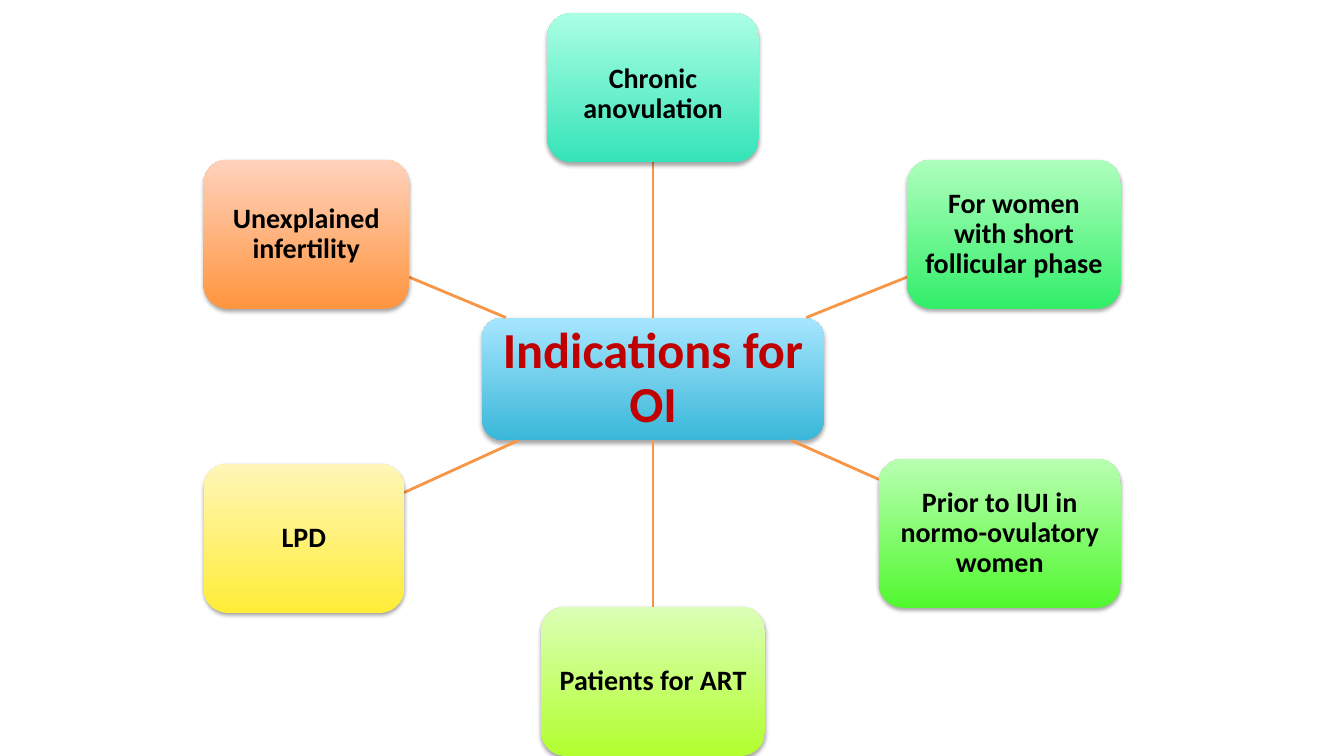
from lxml.etree import SubElement
from pptx import Presentation
from pptx.dml.color import RGBColor
from pptx.enum.shapes import MSO_CONNECTOR, MSO_SHAPE
from pptx.enum.text import MSO_ANCHOR, PP_ALIGN
from pptx.oxml.ns import qn
from pptx.util import Pt

BLACK = RGBColor(0x00, 0x00, 0x00)
RED = RGBColor(0xC0, 0x00, 0x00)
ORANGE = RGBColor(0xF7, 0x96, 0x46)
BLUES = RGBColor(0x39, 0xB7, 0xD8), RGBColor(0xA7, 0xE6, 0xFF)
TEALS = RGBColor(0x35, 0xE4, 0xB8), RGBColor(0xAB, 0xFF, 0xE3)
MINTS = RGBColor(0x32, 0xEE, 0x69), RGBColor(0xAF, 0xFF, 0xBD)
GREENS = RGBColor(0x51, 0xF8, 0x2F), RGBColor(0xB9, 0xFF, 0xB2)
LIMES = RGBColor(0xB2, 0xFF, 0x2F), RGBColor(0xDB, 0xFF, 0xB6)
YELLOWS = RGBColor(0xFF, 0xED, 0x37), RGBColor(0xFF, 0xF6, 0xB9)
PEACHES = RGBColor(0xFF, 0x95, 0x3E), RGBColor(0xFF, 0xD2, 0xBD)

HUB = 344.5, 226.8, 244, 87.8
HIGH = 106.6
NODES = [
    ("Chronic anovulation", 390.9, 9.4, 151.2, TEALS, 9),
    ("For women with short follicular phase", 648, 114, 152.6, MINTS, 0),
    ("Prior to IUI in normo-ovulatory women", 627.8, 327.6, 172.8, GREENS, 0),
    ("Patients for ART", 386.6, 433.4, 159.8, LIMES, 0),
    ("LPD", 145.4, 331.2, 143.3, YELLOWS, 0),
    ("Unexplained infertility", 145.4, 114, 146.9, PEACHES, 0),
]


def center(box):
    """Return the middle point of a box."""
    left, top, wide, high = box
    return left + wide / 2, top + high / 2


def edge(box, goal):
    """Return where the ray from the middle of a box to a goal leaves it."""
    x, y = center(box)
    dx, dy = goal[0] - x, goal[1] - y
    ratio = max(abs(dx) / (box[2] / 2), abs(dy) / (box[3] / 2))
    return x + dx / ratio, y + dy / ratio


class Board:
    """Draws the elements of a radial diagram on one slide."""

    font = "Calibri"

    def __init__(self, slide):
        """Keep the slide to draw on."""
        self.shapes = slide.shapes

    def card(self, text, box, fade, size, color, inset, drop=0):
        """Add a rounded card with a gradient, a soft shadow and text."""
        card = self.shapes.add_shape(
            MSO_SHAPE.ROUNDED_RECTANGLE, *(Pt(n) for n in box))
        card.fill.gradient()
        card.fill.gradient_angle = 90
        for stop, tone in zip(card.fill.gradient_stops, fade):
            stop.color.rgb = tone
        card.line.fill.background()
        self.shade(card)
        frame = card.text_frame
        frame.word_wrap = True
        frame.vertical_anchor = MSO_ANCHOR.MIDDLE
        frame.margin_left = frame.margin_right = Pt(inset)
        frame.margin_top, frame.margin_bottom = Pt(inset + drop), Pt(inset)
        para = frame.paragraphs[0]
        para.text = text
        para.alignment = PP_ALIGN.CENTER
        para.line_spacing = 0.9
        para.font.name = self.font
        para.font.size = Pt(size)
        para.font.bold = True
        para.font.color.rgb = color

    def shade(self, card):
        """Give a card a soft shadow below it."""
        card.shadow.inherit = False
        effects = card._element.spPr.find(qn("a:effectLst"))
        outer = SubElement(effects, qn("a:outerShdw"), blurRad=str(Pt(3.1)),
                           dist=str(Pt(1.8)), dir="5400000", rotWithShape="0")
        black = SubElement(outer, qn("a:srgbClr"), val=str(BLACK))
        SubElement(black, qn("a:alpha"), val="35000")

    def spoke(self, start, end):
        """Add a straight line between two points."""
        line = self.shapes.add_connector(
            MSO_CONNECTOR.STRAIGHT, *(Pt(n) for n in (*start, *end)))
        line.line.color.rgb = ORANGE
        line.line.width = Pt(2)
        SubElement(line._element.spPr, qn("a:effectLst"))


def main():
    """Build the slide and save it."""
    deck = Presentation()
    deck.slide_width, deck.slide_height = Pt(960), Pt(540)
    board = Board(deck.slides.add_slide(deck.slide_layouts[6]))
    board.card("Indications for OI", HUB, BLUES, 36, RED, 7.2)
    for text, left, top, wide, fade, drop in NODES:
        box = left, top, wide, HIGH
        board.spoke(edge(HUB, center(box)), edge(box, center(HUB)))
        board.card(text, box, fade, 20, BLACK, 5, drop)
    deck.save("out.pptx")


if __name__ == "__main__":
    main()
